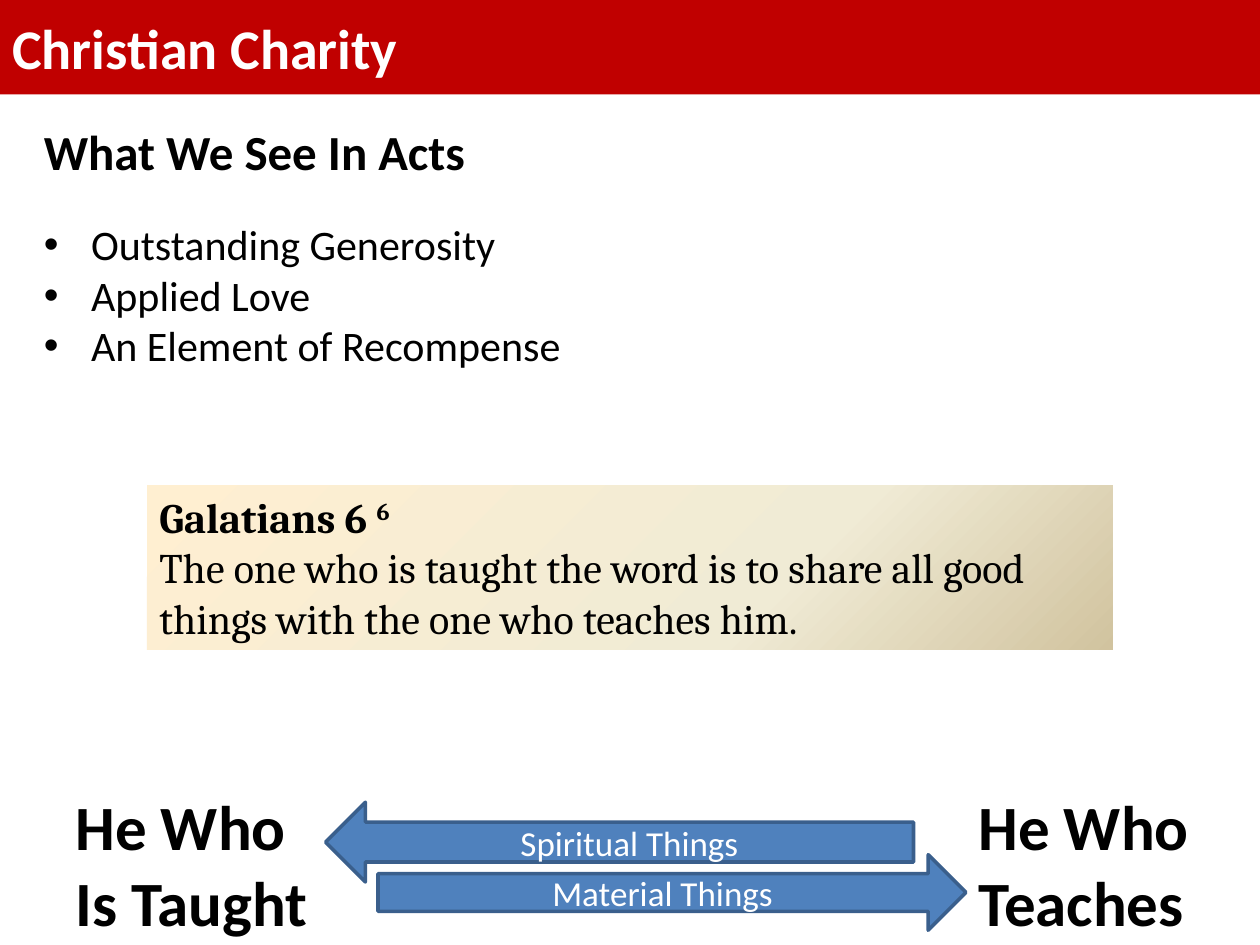
"""Build the Christian Charity slide on a grid of 120 columns by 90 rows."""
import dataclasses
import typing

import lxml.etree
import pptx
import pptx.dml.color
import pptx.enum.shapes
import pptx.enum.text
import pptx.oxml.ns
import pptx.util

WIDTH, HEIGHT = pptx.util.Inches(10), pptx.util.Inches(7.5)
COLUMNS, ROWS = 120, 90
COLOURS = {
    "banner": "C00000", "white": "FFFFFF", "black": "000000",
    "arrow": "4F81BD", "arrow_edge": "3A5F8C",
    "cream": "FFEFD1", "ivory": "F0EBD5", "sand": "D1C39F",
}
PARCHMENT = ((0, "cream"), (65, "ivory"), (100, "sand"))
SHAPES = pptx.enum.shapes.MSO_SHAPE
ALIGN = pptx.enum.text.PP_ALIGN
ANCHOR = pptx.enum.text.MSO_ANCHOR


@dataclasses.dataclass(frozen=True)
class Area:
    column: float
    row: float
    columns: float
    rows: float

    def lengths(self) -> tuple[int, ...]:
        across, down = WIDTH / COLUMNS, HEIGHT / ROWS
        return (round(self.column * across), round(self.row * down),
                round(self.columns * across), round(self.rows * down))


@dataclasses.dataclass(frozen=True)
class Line:
    text: str
    size: int
    bold: bool = False
    colour: str = "black"
    font: str = "Calibri"
    align: ALIGN = ALIGN.LEFT
    bullet: bool = False
    before: int = 0
    superscript: str = ""


@dataclasses.dataclass(frozen=True)
class Arrow:
    preset: SHAPES
    area: Area
    label: str


@dataclasses.dataclass(frozen=True)
class Role:
    column: float
    text: str


ARROWS = (
    Arrow(SHAPES.LEFT_ARROW, Area(31, 76.4, 56, 7.6), "Spiritual Things"),
    Arrow(SHAPES.RIGHT_ARROW, Area(36, 81.4, 56, 7.2), "Material Things"),
)
ROLES = (Role(92, "He Who Teaches"), Role(6, "He Who Is Taught"))
POINTS = ("Outstanding Generosity", "Applied Love", "An Element of Recompense")


def rgb(name: str) -> pptx.dml.color.RGBColor:
    return pptx.dml.color.RGBColor.from_string(COLOURS[name])


def add_bullet(para: typing.Any) -> None:
    properties = para._p.get_or_add_pPr()
    indent = pptx.util.Inches(0.375)
    properties.set("marL", str(indent))
    properties.set("indent", str(-indent))
    for tag, key, value in (("a:buFont", "typeface", "Arial"), ("a:buChar", "char", "•")):
        lxml.etree.SubElement(properties, pptx.oxml.ns.qn(tag)).set(key, value)


def write(box: typing.Any, lines: typing.Sequence[Line], anchor: ANCHOR = ANCHOR.TOP) -> None:
    frame = box.text_frame
    frame.word_wrap = True
    frame.vertical_anchor = anchor
    for index, line in enumerate(lines):
        para = frame.add_paragraph() if index else frame.paragraphs[0]
        para.alignment = line.align
        para.space_before = pptx.util.Pt(line.before)
        para.font.name, para.font.bold = line.font, line.bold
        para.font.size = pptx.util.Pt(line.size)
        para.font.color.rgb = rgb(line.colour)
        para.add_run().text = line.text
        if line.superscript:
            span = para.add_run()
            span.text = line.superscript
            span.font._element.set("baseline", "30000")
        if line.bullet:
            add_bullet(para)


def add_block(page: typing.Any, area: Area, fill: str = "",
              preset: SHAPES = SHAPES.RECTANGLE, edge: str = "") -> typing.Any:
    block = page.shapes.add_shape(preset, *area.lengths())
    block.shadow.inherit = False
    if fill:
        block.fill.solid()
        block.fill.fore_color.rgb = rgb(fill)
    if edge:
        block.line.color.rgb = rgb(edge)
        block.line.width = pptx.util.Pt(2)
    else:
        block.line.fill.background()
    return block


def shade(block: typing.Any, stops: typing.Sequence[tuple[int, str]]) -> None:
    block.fill.gradient()
    block.fill.gradient_angle = 315
    stop_list = next(block._element.iter(pptx.oxml.ns.qn("a:gsLst")))
    for stop in list(stop_list):
        stop_list.remove(stop)
    for position, name in stops:
        stop = lxml.etree.SubElement(stop_list, pptx.oxml.ns.qn("a:gs"))
        stop.set("pos", str(position * 1000))
        lxml.etree.SubElement(stop, pptx.oxml.ns.qn("a:srgbClr")).set("val", COLOURS[name])


def main() -> None:
    deck = pptx.Presentation()
    deck.slide_width, deck.slide_height = WIDTH, HEIGHT
    page = deck.slides.add_slide(deck.slide_layouts[6])

    banner = add_block(page, Area(0, 0, COLUMNS, 9), "banner")
    write(banner, [Line("Christian Charity", 32, True, "white")], ANCHOR.MIDDLE)

    summary = page.shapes.add_textbox(*Area(3, 11, 114, 25).lengths())
    write(summary, [Line("What We See In Acts", 28, True)] + [
        Line(point, 24, bullet=True, before=0 if index else 22)
        for index, point in enumerate(POINTS)])

    verse = add_block(page, Area(14, 46.2, 92, 15.7))
    shade(verse, PARCHMENT)
    write(verse, [
        Line("Galatians 6 ", 24, True, font="Cambria", superscript="6"),
        Line("The one who is taught\u00a0the word is to share all good things "
             "with the one who teaches\u00a0him.", 24, font="Cambria")])

    for arrow in ARROWS:
        shape = add_block(page, arrow.area, "arrow", arrow.preset, "arrow_edge")
        write(shape, [Line(arrow.label, 20, colour="white", align=ALIGN.CENTER)], ANCHOR.MIDDLE)

    for role in ROLES:
        box = page.shapes.add_textbox(*Area(role.column, 75, 25, 15).lengths())
        box.text_frame.margin_top = 0
        write(box, [Line(role.text, 36, True)])

    deck.save("out.pptx")


if __name__ == "__main__":
    main()
